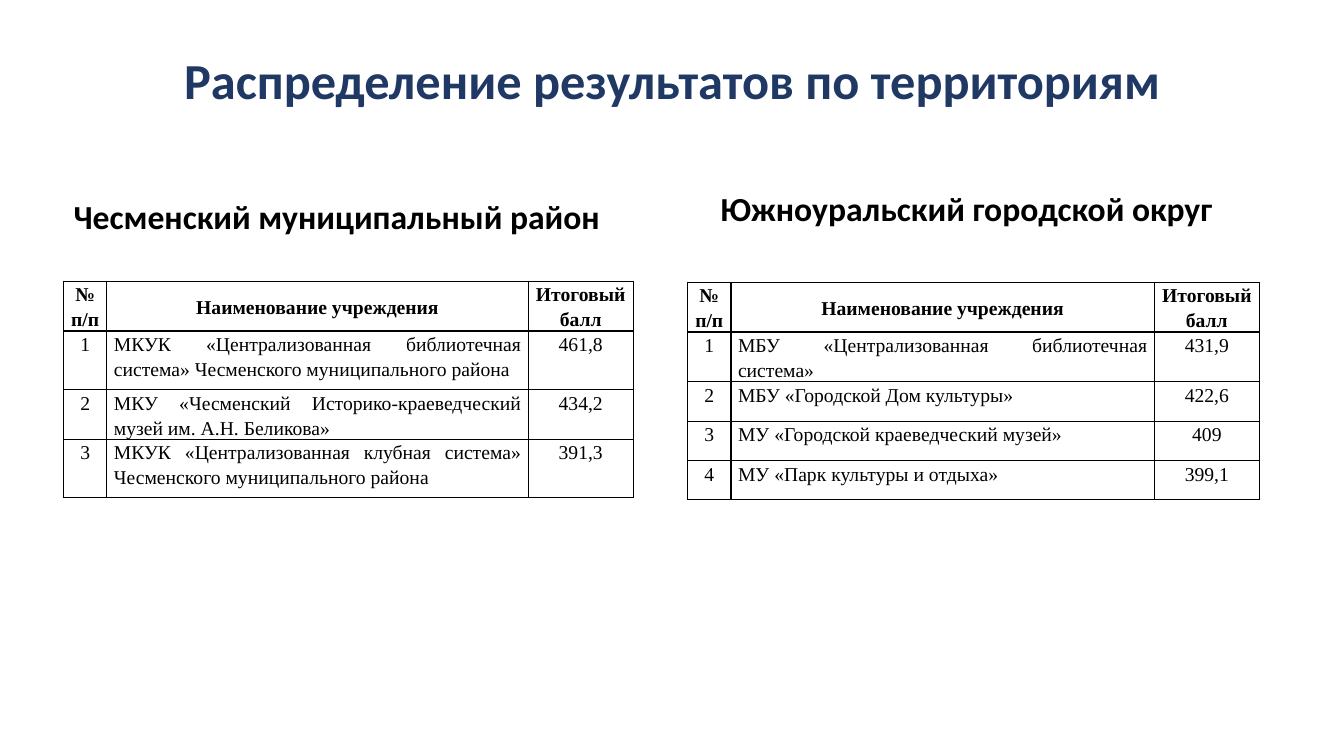
import pptx
import pptx.dml.color
import pptx.enum.text
import pptx.oxml
import pptx.oxml.ns
import pptx.util

Inches, Pt = pptx.util.Inches, pptx.util.Pt
RGB = pptx.dml.color.RGBColor
ALIGN = pptx.enum.text.PP_ALIGN
ANCHOR = pptx.enum.text.MSO_ANCHOR

TITLE = "Распределение результатов по территориям"
TITLE_BOX = (0.92, 0.26, 11.5, 1.13)
COLUMN_NAMES = ("№ п/п", "Наименование учреждения", "Итоговый балл")
TERRITORIES = [
    {
        "name": "Чесменский муниципальный район",
        "placeholder": 1,
        "heading_box": (0.52, 1.5, 5.64, 0.9),
        "table_at": (0.63, 2.79),
        "widths": (0.43, 4.18, 1.04),
        "heights": (0.43, 0.58, 0.43, 0.58),
        "results": [
            ("МКУК «Централизованная библиотечная система» Чесменского муниципального района", "461,8"),
            ("МКУ «Чесменский Историко-краеведческий музей им. А.Н. Беликова»", "434,2"),
            ("МКУК «Централизованная клубная система» Чесменского муниципального района", "391,3"),
        ],
    },
    {
        "name": "Южноуральский городской округ",
        "placeholder": 3,
        "heading_box": (6.75, 1.42, 5.67, 0.9),
        "table_at": (6.82, 2.8),
        "widths": (0.43, 4.2, 1.04),
        "heights": (0.43, 0.39, 0.39, 0.39, 0.39),
        "results": [
            ("МБУ «Централизованная библиотечная система»", "431,9"),
            ("МБУ «Городской Дом культуры»", "422,6"),
            ("МУ «Городской краеведческий музей»", "409"),
            ("МУ «Парк культуры и отдыха»", "399,1"),
        ],
    },
]
THEME = {
    "title": {"font": "Calibri", "size": 36, "color": "203864"},
    "heading": {"font": "Calibri", "size": 24, "color": "000000"},
    "table": {"font": "Times New Roman", "size": 14, "color": "000000"},
    "border": {"color": "000000", "width": 1},
}


def style_paragraph(p, style, bold, align, spacing):
    p.alignment = align
    p.line_spacing = spacing
    p.font.name = style["font"]
    p.font.size = Pt(style["size"])
    p.font.bold = bold
    p.font.color.rgb = RGB.from_string(style["color"])


def fill_placeholder(sp, box, text, style, anchor):
    sp.left, sp.top, sp.width, sp.height = map(Inches, box)
    tf = sp.text_frame
    tf.text = text
    tf.auto_size = pptx.enum.text.MSO_AUTO_SIZE.NONE
    tf.word_wrap = True
    tf.vertical_anchor = anchor
    p = tf.paragraphs[0]
    style_paragraph(p, style, True, ALIGN.CENTER, 0.9)
    return p


def add_borders(cell):
    border = THEME["border"]
    tc_pr = cell._tc.get_or_add_tcPr()
    for i, side in enumerate("LRTB"):
        line = pptx.oxml.parse_xml(
            f'<a:ln{side} {pptx.oxml.ns.nsdecls("a")} w="{Pt(border["width"])}">'
            f'<a:solidFill><a:srgbClr val="{border["color"]}"/></a:solidFill></a:ln{side}>'
        )
        tc_pr.insert(i, line)


def fill_cell(cell, text, header, align):
    cell.text = text
    cell.fill.background()
    cell.margin_left = cell.margin_right = Inches(0.07)
    cell.margin_top = cell.margin_bottom = 0
    cell.vertical_anchor = ANCHOR.MIDDLE if header else ANCHOR.TOP
    style_paragraph(cell.text_frame.paragraphs[0], THEME["table"], header, align, 1.15)
    add_borders(cell)


def add_results_table(slide, territory):
    widths, heights = territory["widths"], territory["heights"]
    rows = [COLUMN_NAMES]
    rows += [(str(n), *result) for n, result in enumerate(territory["results"], 1)]
    left, top = territory["table_at"]
    box = map(Inches, (left, top, sum(widths), sum(heights)))
    table = slide.shapes.add_table(len(rows), len(widths), *box).table
    table.horz_banding = False
    for column, width in zip(table.columns, widths):
        column.width = Inches(width)
    for r, values in enumerate(rows):
        table.rows[r].height = Inches(heights[r])
        for c, value in enumerate(values):
            align = ALIGN.JUSTIFY if r > 0 and c == 1 else ALIGN.CENTER
            fill_cell(table.cell(r, c), value, r == 0, align)


def main():
    prs = pptx.Presentation()
    prs.slide_width, prs.slide_height = Inches(13.33), Inches(7.5)
    slide = prs.slides.add_slide(prs.slide_layouts.get_by_name("Comparison"))
    fill_placeholder(slide.shapes.title, TITLE_BOX, TITLE, THEME["title"], ANCHOR.MIDDLE)
    placeholders = {sp.placeholder_format.idx: sp for sp in slide.placeholders}
    for territory in TERRITORIES:
        sp = placeholders[territory["placeholder"]]
        p = fill_placeholder(sp, territory["heading_box"], territory["name"],
                             THEME["heading"], ANCHOR.BOTTOM)
        p.space_before = Pt(10)
        add_results_table(slide, territory)
    for sp in list(slide.placeholders):
        if not sp.has_text_frame or not sp.text_frame.text:
            sp.element.getparent().remove(sp.element)
    prs.save("out.pptx")


if __name__ == "__main__":
    main()
